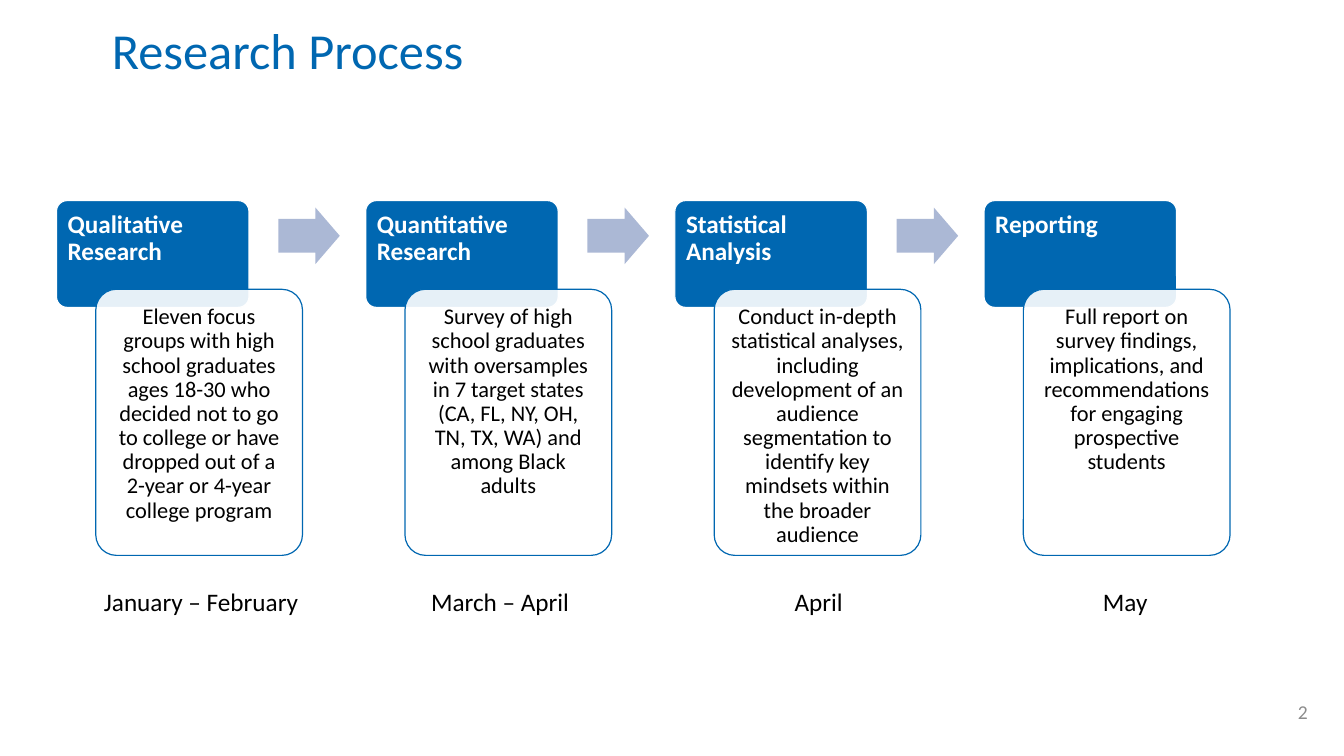
from dataclasses import dataclass

from lxml.etree import SubElement
from pptx import Presentation
from pptx.dml.color import RGBColor
from pptx.enum.shapes import MSO_SHAPE as Shape
from pptx.enum.text import MSO_ANCHOR as Anchor, PP_ALIGN as Align
from pptx.oxml.ns import qn
from pptx.util import Inches, Pt


@dataclass(frozen=True)
class Theme:
    font: str = "Calibri"
    blue: str = "0067B1"
    arrow: str = "ABB8D5"
    white: str = "FFFFFF"
    black: str = "000000"
    grey: str = "8C8C8C"
    title_size: int = 36
    label_size: int = 18
    body_size: int = 16
    number_size: int = 14
    outline: float = 0.85
    tight: float = 0.9


THEME = Theme()

# Heading, detail, month, left and width of the month label
PHASES = [
    ("Qualitative Research",
     "Eleven focus groups with high school graduates ages 18-30 who decided not to go "
     "to college or have dropped out of a 2-year or 4-year college program",
     "January – February", 0.83, 2.33),
    ("Quantitative Research",
     "Survey of high school graduates with oversamples in 7 target states "
     "(CA, FL, NY, OH, TN, TX, WA) and among Black adults",
     "March – April", 3.87, 2.18),
    ("Statistical Analysis",
     "Conduct in-depth statistical analyses, including development of an audience "
     "segmentation to identify key mindsets within the broader audience",
     "April", 7.16, 1.92),
    ("Reporting",
     "Full report on survey findings, implications, and recommendations for engaging "
     "prospective students",
     "May", 10.2, 1.92),
]


def write_text(shape, text, *, size, color, bold=False, align=Align.LEFT,
               anchor=Anchor.TOP, spacing=1.0, insets=(0.1, 0.05, 0.1, 0.05)):
    frame = shape.text_frame
    frame.word_wrap = True
    frame.vertical_anchor = anchor
    (frame.margin_left, frame.margin_top,
     frame.margin_right, frame.margin_bottom) = map(Inches, insets)
    para = frame.paragraphs[0]
    para.alignment = align
    para.line_spacing = spacing
    span = para.add_run()
    span.text = text
    span.font.name = THEME.font
    span.font.size = Pt(size)
    span.font.bold = bold
    span.font.color.rgb = RGBColor.from_string(color)


def add_block(page, kind, box, fill, adjustments, line=None):
    shape = page.shapes.add_shape(kind, *map(Inches, box))
    shape.shadow.inherit = False
    for index, value in enumerate(adjustments):
        shape.adjustments[index] = value
    shape.fill.solid()
    shape.fill.fore_color.rgb = RGBColor.from_string(fill)
    if line:
        shape.line.color.rgb = RGBColor.from_string(line)
        shape.line.width = Pt(THEME.outline)
    else:
        shape.line.fill.background()
    return shape


def add_label(page, box, text, **style):
    write_text(page.shapes.add_textbox(*map(Inches, box)), text, **style)


def set_opacity(shape, percent):
    color = shape.fill._xPr.find(qn("a:solidFill"))[0]
    SubElement(color, qn("a:alpha"), val=str(percent * 1000))


def add_title(page, box, text):
    title = page.shapes.title
    title.left, title.top, title.width, title.height = map(Inches, box)
    write_text(title, text, size=THEME.title_size, color=THEME.blue,
               anchor=Anchor.MIDDLE, spacing=THEME.tight)


def add_phase(page, left, top, heading, detail, has_next):
    """Place a heading, its overlapping detail card and the arrow to the next phase."""
    header = add_block(page, Shape.ROUNDED_RECTANGLE, (left, top, 1.91, 1.06),
                       THEME.blue, [0.1], THEME.white)
    write_text(header, heading, size=THEME.label_size, color=THEME.white, bold=True,
               spacing=THEME.tight, insets=(0.08, 0.08, 0.08, 0.33))
    card = add_block(page, Shape.ROUNDED_RECTANGLE, (left + 0.39, top + 0.88, 2.05, 2.64),
                     THEME.white, [0.1], THEME.blue)
    set_opacity(card, 90)
    write_text(card, detail, size=THEME.body_size, color=THEME.black, align=Align.CENTER,
               spacing=THEME.tight, insets=(0.1, 0.1, 0.1, 0.1))
    if has_next:
        add_block(page, Shape.RIGHT_ARROW, (left + 2.2, top + 0.07, 0.61, 0.56),
                  THEME.arrow, [0.6, 0.43])


def add_process(page, left, top, width):
    """Spread the phases so that the first and last headings start width apart."""
    pitch = width / (len(PHASES) - 1)
    for index, (heading, detail, month, month_left, month_width) in enumerate(PHASES):
        add_phase(page, left + index * pitch, top, heading, detail,
                  index < len(PHASES) - 1)
        add_label(page, (month_left, top + 3.78, month_width, 0.4), month,
                  size=THEME.label_size, color=THEME.black, align=Align.CENTER)


def main():
    deck = Presentation()
    deck.slide_width, deck.slide_height = Inches(13.33), Inches(7.5)
    page = deck.slides.add_slide(deck.slide_layouts[5])
    add_title(page, (1.01, 0, 10.17, 1.06), "Research Process")
    add_process(page, 0.56, 1.99, 9.2)
    add_label(page, (12.09, 6.86, 0.98, 0.4), "2", size=THEME.number_size,
              color=THEME.grey, align=Align.RIGHT, anchor=Anchor.MIDDLE)
    deck.save("out.pptx")


if __name__ == "__main__":
    main()
